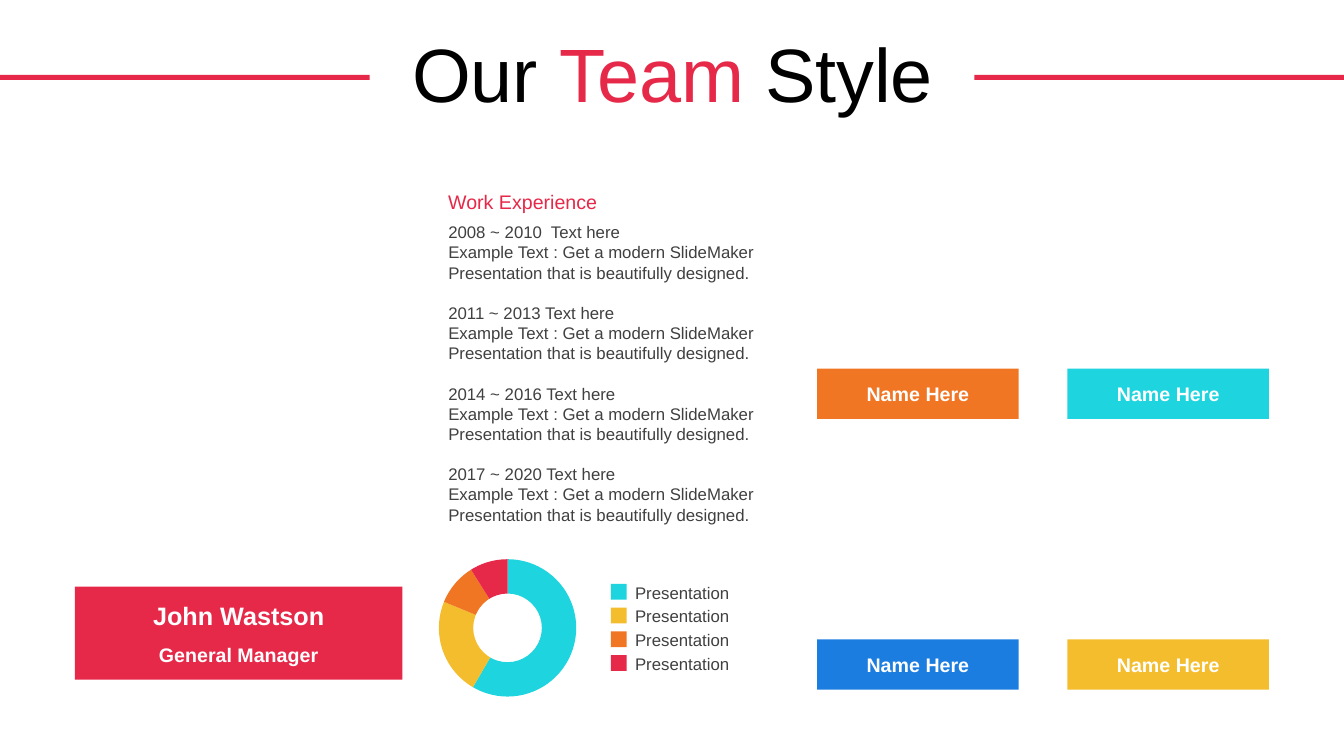
from lxml import etree
from pptx import Presentation
from pptx.chart.data import CategoryChartData
from pptx.dml.color import RGBColor
from pptx.enum.chart import XL_CHART_TYPE
from pptx.enum.shapes import MSO_SHAPE
from pptx.enum.text import MSO_ANCHOR, PP_ALIGN
from pptx.oxml.ns import qn
from pptx.util import Pt

RED = RGBColor(0xE6, 0x29, 0x49)
ORANGE = RGBColor(0xF0, 0x76, 0x24)
TURQUOISE = RGBColor(0x1E, 0xD4, 0xDE)
BLUE = RGBColor(0x1C, 0x7D, 0xE1)
YELLOW = RGBColor(0xF4, 0xBD, 0x2D)
GREY = RGBColor(0x40, 0x40, 0x40)
BLACK = RGBColor(0, 0, 0)
WHITE = RGBColor(0xFF, 0xFF, 0xFF)

deck = Presentation()
deck.slide_width, deck.slide_height = Pt(960), Pt(540)
page = deck.slides.add_slide(deck.slide_layouts[1])


def add_block(left, top, width, height, color):
    block = page.shapes.add_shape(
        MSO_SHAPE.RECTANGLE, Pt(left), Pt(top), Pt(width), Pt(height))
    block.shadow.inherit = False
    block.fill.solid()
    block.fill.fore_color.rgb = color
    block.line.fill.background()
    return block


def style_paragraph(paragraph, size, color, bold=False, align=PP_ALIGN.LEFT):
    paragraph.alignment = align
    for span in paragraph.runs:
        span.font.name = "Arial"
        span.font.size = Pt(size)
        span.font.bold = bold
        span.font.color.rgb = color


# Title between two rules
for left in (0, 696):
    add_block(left, 53.5, 264, 3.6, RED)

title = page.shapes.title
title.left, title.top, title.width, title.height = Pt(25), Pt(22.3), Pt(911), Pt(66.2)
title.text_frame.vertical_anchor = MSO_ANCHOR.MIDDLE
headline = title.text_frame.paragraphs[0]
for words in ("Our ", "Team", " Style"):
    headline.add_run().text = words
style_paragraph(headline, 54, BLACK, align=PP_ALIGN.CENTER)
headline.runs[1].font.color.rgb = RED
headline.line_spacing = 0.9

# Manager card
card = add_block(53.5, 419, 234, 66.5, RED)
card.text_frame.text = "John Wastson\nGeneral Manager"
name, role = card.text_frame.paragraphs
style_paragraph(name, 18, WHITE, True, PP_ALIGN.CENTER)
style_paragraph(role, 14, WHITE, True, PP_ALIGN.CENTER)
role.space_before = Pt(8.5)

# Work experience
heading = page.shapes.add_textbox(Pt(313), Pt(132), Pt(246), Pt(24.5))
heading.text_frame.word_wrap = True
heading.text_frame.text = "Work Experience"
style_paragraph(heading.text_frame.paragraphs[0], 14, RED)

PERIODS = ["2008 ~ 2010  Text here", "2011 ~ 2013 Text here",
           "2014 ~ 2016 Text here", "2017 ~ 2020 Text here"]
DETAIL = "Example Text : Get a modern SlideMaker Presentation that is beautifully designed."
LINE = 14.4

history = page.placeholders[1]
history.left, history.top, history.width, history.height = Pt(313), Pt(155), Pt(246), Pt(225)
history.text_frame.text = "\n".join(f"{period}\n{DETAIL}" for period in PERIODS)
for index, paragraph in enumerate(history.text_frame.paragraphs):
    style_paragraph(paragraph, 12, GREY)
    paragraph.line_spacing = Pt(LINE)
    starts_later_period = index % 2 == 0 and index > 0
    paragraph.space_before = Pt(LINE if starts_later_period else 0)
    properties = paragraph._p.get_or_add_pPr()
    properties.set("marL", "0")
    properties.set("indent", "0")
    etree.SubElement(properties, qn("a:buNone"))

# Doughnut and its legend
SLICES = [(59, TURQUOISE), (23, YELLOW), (10, ORANGE), (9, RED)]

data = CategoryChartData()
data.categories = ["1", "2", "3", "4"]
data.add_series("Series 1", [value for value, color in SLICES])
chart = page.shapes.add_chart(
    XL_CHART_TYPE.DOUGHNUT, Pt(297.4), Pt(389.5), Pt(130.3), Pt(118), data).chart
chart.has_legend = False
chart.has_title = False
chart.font.name = "Arial"
chart.font.size = Pt(18)
chart.font.color.rgb = BLACK
plot = chart.plots[0]
plot.vary_by_categories = False

for index, (value, color) in enumerate(SLICES):
    fill = plot.series[0].points[index].format.fill
    fill.solid()
    fill.fore_color.rgb = color

    top = 417 + 17 * index
    add_block(436.3, top, 11.3, 11.3, color)
    label = page.shapes.add_textbox(Pt(453.6), Pt(top - 4.6), Pt(82), Pt(21.6))
    label.text_frame.word_wrap = True
    label.text_frame.margin_left = label.text_frame.margin_right = 0
    label.text_frame.text = "Presentation"
    style_paragraph(label.text_frame.paragraphs[0], 12, GREY)

# Team members, two by two
for index, color in enumerate([ORANGE, TURQUOISE, BLUE, YELLOW]):
    row, column = divmod(index, 2)
    member = add_block(583.7 + 178.8 * column, 263.3 + 193.4 * row, 144, 36, color)
    member.text_frame.text = "Name Here"
    style_paragraph(member.text_frame.paragraphs[0], 14, WHITE, True, PP_ALIGN.CENTER)

deck.save("out.pptx")
